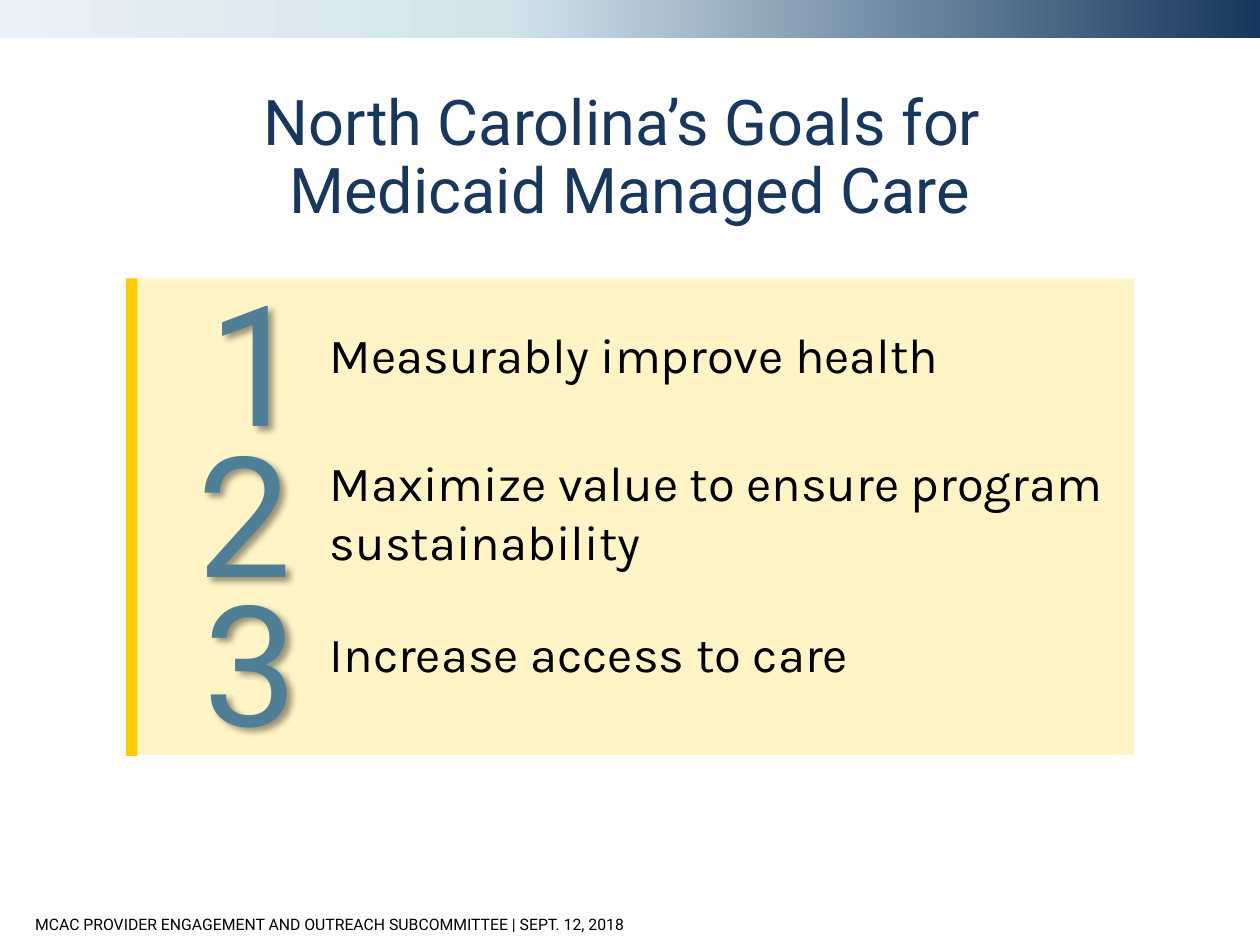
from dataclasses import dataclass

import pptx
import pptx.dml.color
import pptx.enum.shapes
import pptx.enum.text
import pptx.oxml
import pptx.oxml.ns
import pptx.shapes.autoshape
import pptx.slide
import pptx.util

Inches = pptx.util.Inches
RGBColor = pptx.dml.color.RGBColor
Align = pptx.enum.text.PP_ALIGN
Anchor = pptx.enum.text.MSO_ANCHOR

NAVY = RGBColor(0x17, 0x37, 0x5E)
SKY = RGBColor(0xD3, 0xE4, 0xED)
MIST = RGBColor(0xE9, 0xF1, 0xF6)
CREAM = RGBColor(0xFF, 0xF4, 0xC5)
GOLD = RGBColor(0xFF, 0xCC, 0x00)
STEEL = RGBColor(0x4F, 0x7F, 0x97)
BLACK = RGBColor(0, 0, 0)
NAMESPACE = pptx.oxml.ns.nsdecls("a")


@dataclass(frozen=True)
class Box:
    left: float
    top: float
    width: float
    height: float

    def lengths(self) -> tuple:
        return tuple(Inches(n) for n in (self.left, self.top, self.width, self.height))


@dataclass(frozen=True)
class TextStyle:
    font: str
    size: float
    color: RGBColor
    align: Align = Align.LEFT
    anchor: Anchor = Anchor.TOP
    line_spacing: float = 1.0
    space_before: float = 0
    grows: bool = False


@dataclass(frozen=True)
class Goal:
    number: str
    number_box: Box
    text: str
    text_box: Box


TITLE_STYLE = TextStyle("Roboto", 36, NAVY, Align.CENTER, line_spacing=0.9)
GOAL_STYLE = TextStyle("Karla", 28, BLACK, space_before=12)
NUMBER_STYLE = TextStyle("Roboto", 96, STEEL, Align.CENTER, Anchor.MIDDLE, grows=True)
FOOTER_STYLE = TextStyle("Roboto", 9, BLACK, anchor=Anchor.MIDDLE, grows=True)

GOALS = (
    Goal("1", Box(1.56, 1.99, 0.51, 1.72),
         "Measurably improve health", Box(2.52, 2.53, 7.48, 0.63)),
    Goal("2", Box(1.47, 3.19, 0.71, 1.72),
         "Maximize value to ensure program sustainability", Box(2.52, 3.54, 7.48, 1.05)),
    Goal("3", Box(1.52, 4.37, 0.59, 1.72),
         "Increase access to care", Box(2.52, 4.9, 7.48, 0.64)),
)


def add_rectangle(slide: pptx.slide.Slide, box: Box,
                  color: RGBColor) -> pptx.shapes.autoshape.Shape:
    rectangle = slide.shapes.add_shape(
        pptx.enum.shapes.MSO_SHAPE.RECTANGLE, *box.lengths())
    rectangle.shadow.inherit = False
    rectangle.fill.solid()
    rectangle.fill.fore_color.rgb = color
    rectangle.line.fill.background()
    return rectangle


def add_header_band(slide: pptx.slide.Slide) -> None:
    band = add_rectangle(slide, Box(0, 0, 10, 0.3), NAVY)
    stops = "".join(
        f'<a:gs pos="{percent * 1000}"><a:srgbClr val="{color}"/></a:gs>'
        for percent, color in ((0, NAVY), (60, SKY), (100, MIST)))
    gradient = pptx.oxml.parse_xml(
        f'<a:gradFill {NAMESPACE} rotWithShape="1"><a:gsLst>{stops}</a:gsLst>'
        '<a:lin ang="10800000" scaled="0"/></a:gradFill>')
    properties = band._element.spPr
    properties.replace(properties.find(pptx.oxml.ns.qn("a:solidFill")), gradient)


def add_text(slide: pptx.slide.Slide, box: Box, lines: tuple[str, ...],
             style: TextStyle) -> pptx.shapes.autoshape.Shape:
    shape = slide.shapes.add_textbox(*box.lengths())
    frame = shape.text_frame
    frame.word_wrap = True
    frame.vertical_anchor = style.anchor
    if style.grows:
        frame.auto_size = pptx.enum.text.MSO_AUTO_SIZE.SHAPE_TO_FIT_TEXT
    paragraph = frame.paragraphs[0]
    paragraph.alignment = style.align
    paragraph.line_spacing = style.line_spacing
    paragraph.space_before = pptx.util.Pt(style.space_before)
    for index, line in enumerate(lines):
        if index:
            paragraph.add_line_break()
        run = paragraph.add_run()
        run.text = line
        run.font.name = style.font
        run.font.size = pptx.util.Pt(style.size)
        run.font.color.rgb = style.color
    return shape


def add_soft_shadow(shape: pptx.shapes.autoshape.Shape) -> None:
    shape._element.spPr.append(pptx.oxml.parse_xml(
        f'<a:effectLst {NAMESPACE}><a:outerShdw blurRad="50800" dist="38100" '
        'dir="2700000" algn="tl" rotWithShape="0"><a:srgbClr val="000000">'
        '<a:alpha val="40000"/></a:srgbClr></a:outerShdw></a:effectLst>'))


def add_goal(slide: pptx.slide.Slide, goal: Goal) -> None:
    add_text(slide, goal.text_box, (goal.text,), GOAL_STYLE)
    add_soft_shadow(add_text(slide, goal.number_box, (goal.number,), NUMBER_STYLE))


def main() -> None:
    """Build the slide of Medicaid managed care goals."""
    presentation = pptx.Presentation()
    presentation.slide_width = Inches(10)
    presentation.slide_height = Inches(7.5)
    slide = presentation.slides.add_slide(presentation.slide_layouts[6])
    add_header_band(slide)
    add_text(slide, Box(0.18, 7.21, 7.27, 0.25),
             ("MCAC PROVIDER ENGAGEMENT AND OUTREACH SUBCOMMITTEE | SEPT. 12, 2018",),
             FOOTER_STYLE)
    add_rectangle(slide, Box(1, 2.21, 8, 3.78), CREAM)
    add_rectangle(slide, Box(1, 2.21, 0.09, 3.79), GOLD)
    add_text(slide, Box(0, 0.67, 10, 0.99),
             ("North Carolina’s Goals for ", "Medicaid Managed Care"), TITLE_STYLE)
    for goal in GOALS:
        add_goal(slide, goal)
    presentation.save("out.pptx")


if __name__ == "__main__":
    main()
